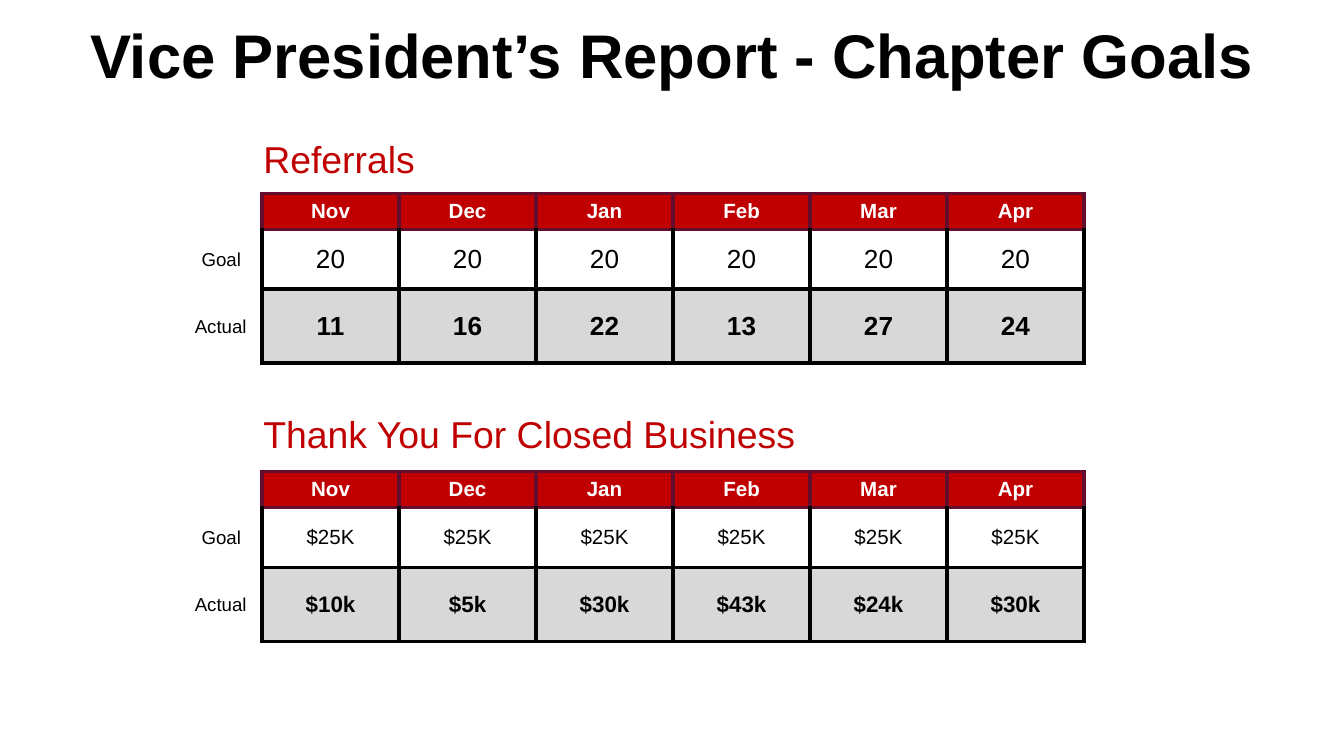
from lxml import etree
from pptx import Presentation
from pptx.dml.color import RGBColor
from pptx.enum.text import MSO_ANCHOR, MSO_AUTO_SIZE, PP_ALIGN
from pptx.oxml.ns import qn
from pptx.util import Pt

MIDDLE = MSO_ANCHOR.MIDDLE
NO_FIT = MSO_AUTO_SIZE.NONE
LEFT, CENTER = PP_ALIGN.LEFT, PP_ALIGN.CENTER

FONT = "Arial"
BLACK, WHITE, RED, PLUM, GRAY = "000000", "FFFFFF", "C00000", "640E2F", "D8D8D8"

TITLE = "Vice President’s Report - Chapter Goals"
MONTHS = ["Nov", "Dec", "Jan", "Feb", "Mar", "Apr"]
SECTIONS = [
    {
        "heading": "Referrals", "heading_top": 72.7, "heading_height": 24.5,
        "table_top": 103.5, "sizes": [11, 14, 14],
        "goal": ["20"] * 6,
        "actual": ["11", "16", "22", "13", "27", "24"],
    },
    {
        "heading": "Thank You For Closed Business", "heading_top": 221, "heading_height": 23,
        "table_top": 252.6, "sizes": [11, 11, 12],
        "goal": ["$25K"] * 6,
        "actual": ["$10k", "$5k", "$30k", "$43k", "$24k", "$30k"],
    },
]
# fill, text colour, bold, top border, other borders
ROW_STYLES = [
    (RED, WHITE, True, PLUM, PLUM),
    (WHITE, BLACK, False, PLUM, BLACK),
    (GRAY, BLACK, True, BLACK, BLACK),
]
# text, left, table row
ROW_LABELS = [("Goal", 108, 1), ("Actual", 104.4, 2)]

TABLE_LEFT, COLUMN_WIDTH = 140.4, 73.4
ROW_HEIGHTS = [19.4, 32, 39.6]
HEADING_LEFT, HEADING_WIDTH = 141.1, 435
LABEL_RIGHT, LABEL_HEIGHT = 133.2, 11.5
CELL_INSET, BORDER_WIDTH = 2, 2


def rgb(color):
    return RGBColor.from_string(color)


def style_text(paragraph, size, color, bold=False, align=LEFT):
    paragraph.alignment = align
    font = paragraph.font
    font.name, font.size, font.bold = FONT, Pt(size), bold
    font.color.rgb = rgb(color)


def set_insets(target, horizontal, vertical):
    target.margin_left = target.margin_right = Pt(horizontal)
    target.margin_top = target.margin_bottom = Pt(vertical)


def add_text(slide, text, left, top, width, height, size, color):
    box = slide.shapes.add_textbox(Pt(left), Pt(top), Pt(width), Pt(height))
    frame = box.text_frame
    frame.word_wrap = True
    frame.vertical_anchor = MIDDLE
    set_insets(frame, 0, 0)
    frame.text = text
    style_text(frame.paragraphs[0], size, color)


def set_borders(cell, top_color, other_color):
    properties = cell._tc.get_or_add_tcPr()
    for side in "LRTB":
        line = etree.SubElement(properties, qn(f"a:ln{side}"), w=str(Pt(BORDER_WIDTH)))
        fill = etree.SubElement(line, qn("a:solidFill"))
        etree.SubElement(fill, qn("a:srgbClr"), val=top_color if side == "T" else other_color)


def add_goal_table(slide, section):
    rows = [MONTHS, section["goal"], section["actual"]]
    table = slide.shapes.add_table(
        len(rows), len(MONTHS), Pt(TABLE_LEFT), Pt(section["table_top"]),
        Pt(COLUMN_WIDTH * len(MONTHS)), Pt(sum(ROW_HEIGHTS))).table
    for column in table.columns:
        column.width = Pt(COLUMN_WIDTH)
    for r, (values, size, style) in enumerate(zip(rows, section["sizes"], ROW_STYLES)):
        fill, color, bold, top_border, other_border = style
        table.rows[r].height = Pt(ROW_HEIGHTS[r])
        for c, value in enumerate(values):
            cell = table.cell(r, c)
            cell.text = value
            cell.vertical_anchor = MIDDLE
            set_insets(cell, CELL_INSET, CELL_INSET)
            style_text(cell.text_frame.paragraphs[0], size, color, bold, CENTER)
            set_borders(cell, top_border, other_border)
            cell.fill.solid()
            cell.fill.fore_color.rgb = rgb(fill)


def add_title(slide):
    title = slide.shapes.title
    title.left, title.top, title.width, title.height = Pt(30), Pt(0), Pt(660), Pt(62.6)
    frame = title.text_frame
    frame.text = TITLE
    frame.word_wrap = True
    frame.auto_size = NO_FIT
    frame.vertical_anchor = MIDDLE
    set_insets(frame, 5, 3)
    paragraph = frame.paragraphs[0]
    paragraph.line_spacing = 0.9
    style_text(paragraph, 33, BLACK, True, CENTER)


def main():
    deck = Presentation()
    deck.slide_width, deck.slide_height = Pt(720), Pt(405)
    slide = deck.slides.add_slide(deck.slide_layouts[5])
    add_title(slide)
    for section in SECTIONS:
        add_text(slide, section["heading"], HEADING_LEFT, section["heading_top"],
                 HEADING_WIDTH, section["heading_height"], 20, RED)
        add_goal_table(slide, section)
        for label, left, row in ROW_LABELS:
            row_middle = section["table_top"] + sum(ROW_HEIGHTS[:row]) + ROW_HEIGHTS[row] / 2
            add_text(slide, label, left, row_middle - LABEL_HEIGHT / 2,
                     LABEL_RIGHT - left, LABEL_HEIGHT, 10, BLACK)
    deck.save("out.pptx")


if __name__ == "__main__":
    main()
